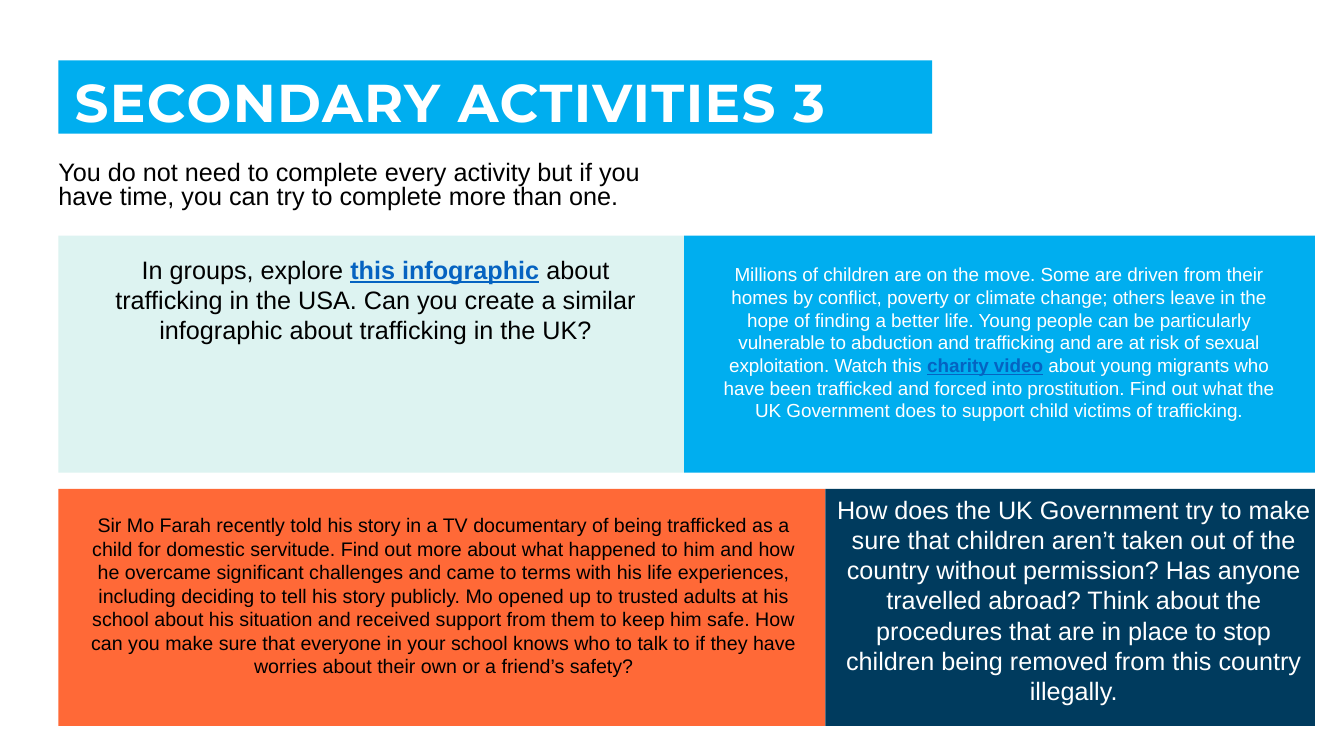
"""Build the slide of secondary activities on child trafficking."""
from pptx import Presentation
from pptx.dml.color import RGBColor
from pptx.enum.shapes import MSO_SHAPE
from pptx.enum.text import MSO_ANCHOR, MSO_AUTO_SIZE, PP_ALIGN
from pptx.util import Cm, Pt

RECTANGLE = MSO_SHAPE.RECTANGLE
TOP, MIDDLE = MSO_ANCHOR.TOP, MSO_ANCHOR.MIDDLE
FIXED, GROW = MSO_AUTO_SIZE.NONE, MSO_AUTO_SIZE.SHAPE_TO_FIT_TEXT
LEFT, CENTER = PP_ALIGN.LEFT, PP_ALIGN.CENTER

WHITE = RGBColor(0xFF, 0xFF, 0xFF)
BLACK = RGBColor(0x00, 0x00, 0x00)
CYAN = RGBColor(0x00, 0xAE, 0xEF)
MINT = RGBColor(0xDD, 0xF3, 0xF1)
ORANGE = RGBColor(0xFF, 0x69, 0x37)
NAVY = RGBColor(0x00, 0x3B, 0x5E)
LINK_BLUE = RGBColor(0x05, 0x63, 0xC1)

MARGIN = 1.47
GRID_WIDTH = 31.67
GRID_TOP = 5.94
PANEL_HEIGHT = 5.97
ROW_STEP = 6.38
PANEL_ROWS = [(15.77, MINT, CYAN), (19.33, ORANGE, NAVY)]

ACTIVITIES = [
    ((2.01, 6.27, 14.91, 2.57), 18, BLACK, [
        "In groups, explore ", "this infographic",
        " about trafficking in the USA. Can you create a similar infographic "
        "about trafficking in the UK?"]),
    ((20.8, 12.32, 12.52, 5.64), 18, WHITE, [
        "How does the UK Government try to make sure that children aren’t taken "
        "out of the country without permission? Has anyone travelled abroad? "
        "Think about the procedures that are in place to stop children being "
        "removed from this country illegally."]),
    ((17.6, 6.5, 15.16, 4.29), 13.5, WHITE, [
        "Millions of children are on the move. Some are driven from their homes "
        "by conflict, poverty or climate change; others leave in the hope of "
        "finding a better life. Young people can be particularly vulnerable to "
        "abduction and trafficking and are at risk of sexual exploitation. "
        "Watch this ", "charity video",
        " about young migrants who have been trafficked and forced into "
        "prostitution. Find out what the UK Government does to support child "
        "victims of trafficking."]),
    ((2.01, 12.8, 18.36, 4.45), 14, BLACK, [
        "Sir Mo Farah recently told his story in a TV documentary of being "
        "trafficked as a child for domestic servitude. Find out more about what "
        "happened to him and how he overcame significant challenges and came to "
        "terms with his life experiences, including deciding to tell his story "
        "publicly. Mo opened up to trusted adults at his school about his "
        "situation and received support from them to keep him safe. How can you "
        "make sure that everyone in your school knows who to talk to if they "
        "have worries about their own or a friend’s safety?"]),
]


def add_span(para, text, *, size, color, font="Arial", bold=False,
             underline=False, spacing=None):
    """Append one formatted span to a paragraph."""
    span = para.add_run()
    span.text = text
    span.font.name = font
    span.font.size = Pt(size)
    span.font.color.rgb = color
    span.font.bold = bold
    span.font.underline = underline
    if spacing is not None:
        span.font._element.set("spc", str(spacing))


class ActivitySlide:
    """Hold the house style and the slide being built."""

    def __init__(self, deck):
        """Add a title-only slide to the deck."""
        self.slide = deck.slides.add_slide(deck.slide_layouts[5])

    def frame(self, box, insets, anchor=TOP, auto_size=FIXED):
        """Prepare the text frame of a box and return it."""
        frame = box.text_frame
        frame.auto_size = auto_size
        frame.word_wrap = True
        frame.vertical_anchor = anchor
        (frame.margin_left, frame.margin_top,
         frame.margin_right, frame.margin_bottom) = map(Cm, insets)
        return frame

    def title(self, text, place):
        """Format the title placeholder as a coloured banner."""
        banner = self.slide.shapes.title
        banner.left, banner.top, banner.width, banner.height = map(Cm, place)
        banner.fill.solid()
        banner.fill.fore_color.rgb = CYAN
        para = self.frame(banner, (0.41, 0.41, 0.3, 0), MIDDLE).paragraphs[0]
        para.alignment = LEFT
        para.line_spacing = 0.9
        add_span(para, text, size=38, color=WHITE, font="Montserrat",
                 bold=True, spacing=100)

    def panel(self, left, top, width, color):
        """Draw one plain coloured panel."""
        panel = self.slide.shapes.add_shape(
            RECTANGLE, Cm(left), Cm(top), Cm(width), Cm(PANEL_HEIGHT))
        panel.shadow.inherit = False
        panel.fill.solid()
        panel.fill.fore_color.rgb = color
        panel.line.fill.background()

    def text(self, place, size, color, parts, *, align=CENTER, line_spacing=None,
             left_inset=0.25, auto_size=GROW):
        """Add a text box whose every second part looks like a link."""
        box = self.slide.shapes.add_textbox(*map(Cm, place))
        insets = (left_inset, 0.13, 0.25, 0.13)
        para = self.frame(box, insets, auto_size=auto_size).paragraphs[0]
        para.alignment = align
        para.line_spacing = line_spacing
        for index, part in enumerate(parts):
            linked = index % 2 == 1
            add_span(para, part, size=size, color=LINK_BLUE if linked else color,
                     bold=linked, underline=linked)


def main():
    """Build and save the deck."""
    deck = Presentation()
    deck.slide_width, deck.slide_height = Cm(33.87), Cm(19.05)
    page = ActivitySlide(deck)
    page.title("SECONDARY ACTIVITIES 3", (MARGIN, 1.52, 22.02, 1.85))
    page.text((MARGIN, 3.96, 15.77, 1.57), 18, BLACK, [
        "You do not need to complete every activity but if you have time, "
        "you can try to complete more than one."],
        align=LEFT, line_spacing=0.8, left_inset=0, auto_size=FIXED)
    for row, (split, left_color, right_color) in enumerate(PANEL_ROWS):
        top = GRID_TOP + row * ROW_STEP
        page.panel(MARGIN, top, split, left_color)
        page.panel(MARGIN + split, top, GRID_WIDTH - split, right_color)
    for place, size, color, parts in ACTIVITIES:
        page.text(place, size, color, parts)
    deck.save("out.pptx")


if __name__ == "__main__":
    main()
